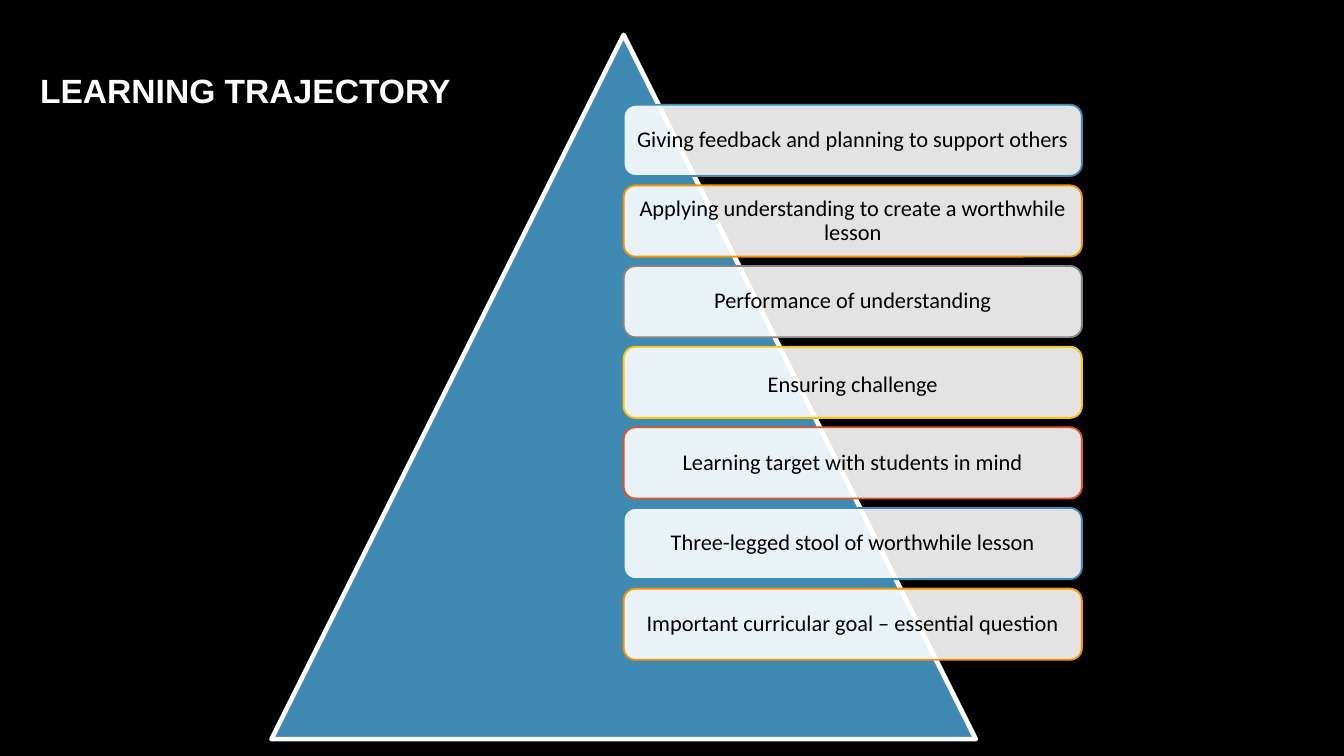
from dataclasses import dataclass

from pptx import Presentation, util as u
from pptx.dml.color import RGBColor
from pptx.enum import shapes as sh, text as tx
from pptx.oxml.ns import qn
from lxml import etree


@dataclass(frozen=True)
class Theme:
    back: str = "000000"
    ink: str = "000000"
    pale: str = "FFFFFF"
    blue: str = "3E8AB3"
    hues: tuple = ("3E8AB3", "F69200", "838383", "FEC306", "DF5327")
    alpha: int = 89
    head: int = 18
    body: int = 12
    head_font: str = "Arial"
    body_font: str = "Calibri"


T = Theme()
WIDE = 10
HIGH = WIDE * 9 / 16
LEFT, TOP, PITCH = 4.64, 0.78, 0.6
CARD_W, CARD_H, PAD = 3.41, 0.53, 0.05
STEPS = (
    ("Giving feedback and planning to support others", 0),
    ("Applying understanding to create a worthwhile lesson", 0),
    ("Performance of understanding", 0),
    ("Ensuring challenge", 0.04),
    ("Learning target with students in mind", 0),
    ("Three-legged stool of worthwhile lesson", 0),
    ("Important curricular goal – essential question", 0),
)


def rgb(code):
    return RGBColor.from_string(code)


def fade(shape, share):
    color = shape._element.spPr.find(qn("a:solidFill"))[0]
    etree.SubElement(color, qn("a:alpha"), val=str(share * 1000))


def form(group, kind, box, fill, line, width):
    shape = group.shapes.add_shape(kind, *map(u.Inches, box))
    shape.shadow.inherit = False
    shape.fill.solid()
    shape.fill.fore_color.rgb = rgb(fill)
    shape.line.color.rgb = rgb(line)
    shape.line.width = u.Pt(width)
    return shape


def write(frame, words, face, size, color, bold=False):
    frame.word_wrap = True
    para = frame.paragraphs[0]
    para.text = words
    font = para.font
    font.name, font.size, font.bold = face, u.Pt(size), bold
    font.color.rgb = rgb(color)
    return para


def card(group, row, words, drop):
    box = (LEFT, TOP + row * PITCH, CARD_W, CARD_H)
    hue = T.hues[row % len(T.hues)]
    shape = form(group, sh.MSO_SHAPE.ROUNDED_RECTANGLE, box, T.pale, hue, 1)
    fade(shape, T.alpha)
    frame = shape.text_frame
    frame.margin_left = frame.margin_right = frame.margin_bottom = u.Inches(PAD)
    frame.margin_top = u.Inches(PAD + drop)
    frame.vertical_anchor = tx.MSO_ANCHOR.MIDDLE
    para = write(frame, words, T.body_font, T.body, T.ink)
    para.alignment = tx.PP_ALIGN.CENTER
    para.line_spacing = 0.9


def title(slide, words):
    box = slide.shapes.add_textbox(*map(u.Inches, (0.2, 0.47, 3.31, 0.4)))
    write(box.text_frame, words, T.head_font, T.head, T.pale, True)
    box.text_frame.auto_size = tx.MSO_AUTO_SIZE.SHAPE_TO_FIT_TEXT


def main():
    deck = Presentation()
    deck.slide_width, deck.slide_height = u.Inches(WIDE), u.Inches(HIGH)
    slide = deck.slides.add_slide(deck.slide_layouts[6])
    slide.background.fill.solid()
    slide.background.fill.fore_color.rgb = rgb(T.back)
    group = slide.shapes.add_group_shape()
    form(group, sh.MSO_SHAPE.ISOSCELES_TRIANGLE, (2.02, 0.26, 5.24, 5.24),
         T.blue, T.pale, 2.5)
    for row, (words, drop) in enumerate(STEPS):
        card(group, row, words, drop)
    title(slide, "LEARNING TRAJECTORY")
    deck.save("out.pptx")


if __name__ == "__main__":
    main()
